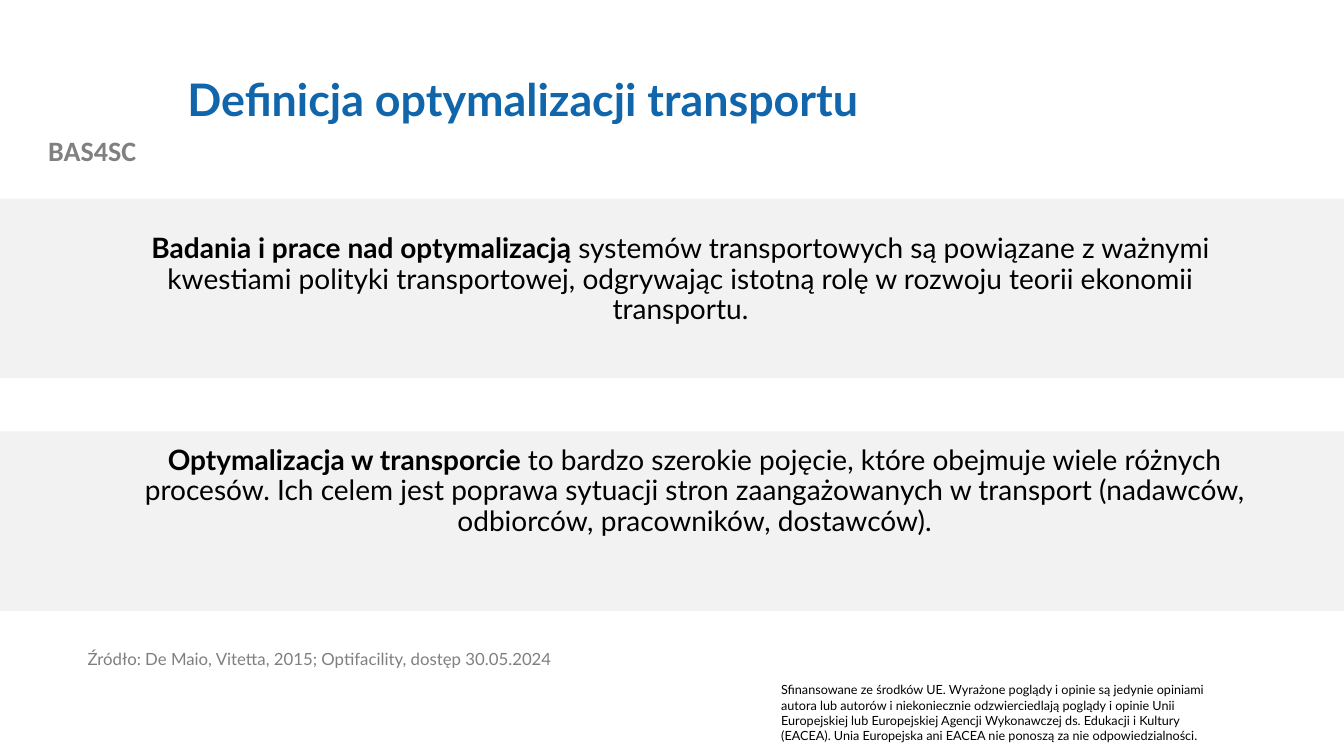
import pptx
import pptx.util
import pptx.dml.color
import pptx.enum.shapes
import pptx.enum.text
from pptx.util import Inches

# Content: each text is a list of (words, bold) runs
PROJECT = [("BAS4SC", True)]
TITLE = [("Definicja optymalizacji transportu", True)]
RESEARCH = [
    ("Badania i prace nad optymalizacją ", True),
    ("systemów transportowych są powiązane z ważnymi kwestiami polityki transportowej, "
     "odgrywając istotną rolę w rozwoju teorii ekonomii transportu.", False),
]
DEFINITION = [
    ("Optymalizacja w transporcie ", True),
    ("to bardzo szerokie pojęcie, które obejmuje wiele różnych procesów. Ich celem jest "
     "poprawa sytuacji stron zaangażowanych w transport (nadawców, odbiorców, "
     "pracowników, dostawców).", False),
]
SOURCE = [("Źródło: De Maio, Vitetta, 2015; Optifacility, dostęp 30.05.2024", False)]
FUNDING = [
    ("Sfinansowane ze środków UE. Wyrażone poglądy i opinie są jedynie opiniami autora lub "
     "autorów i niekoniecznie odzwierciedlają poglądy i opinie Unii Europejskiej lub "
     "Europejskiej Agencji Wykonawczej ds. Edukacji i Kultury (EACEA). Unia Europejska ani "
     "EACEA nie ponoszą za nie odpowiedzialności.", False),
]

SLIDE_W, SLIDE_H = 13.33, 7.5
BAND_H = 1.78
BAND_TOPS = (1.97, 4.28)

prs = pptx.Presentation()
prs.slide_width, prs.slide_height = Inches(SLIDE_W), Inches(SLIDE_H)
s = prs.slides.add_slide(prs.slide_layouts[6])


def rgb(value):
    return pptx.dml.color.RGBColor.from_string(value)


def add_text(runs, at, size, color="000000", font="Lato", center=False,
             middle=False, spacing=0.9):
    tf = s.shapes.add_textbox(*map(Inches, at)).text_frame
    tf.word_wrap = True
    anchor = pptx.enum.text.MSO_ANCHOR
    tf.vertical_anchor = anchor.MIDDLE if middle else anchor.TOP
    p = tf.paragraphs[0]
    align = pptx.enum.text.PP_ALIGN
    p.alignment = align.CENTER if center else align.LEFT
    p.line_spacing = spacing
    for words, bold in runs:
        r = p.add_run()
        r.text = words
        r.font.name, r.font.size, r.font.bold = font, pptx.util.Pt(size), bold
        r.font.color.rgb = rgb(color)


# Grey bands across the slide
for top in BAND_TOPS:
    band = s.shapes.add_shape(pptx.enum.shapes.MSO_SHAPE.RECTANGLE, 0, Inches(top),
                              Inches(SLIDE_W), Inches(BAND_H))
    band.shadow.inherit = False
    band.fill.solid()
    band.fill.fore_color.rgb = rgb("F2F2F2")
    band.line.fill.background()

# Heading
add_text(PROJECT, (0, 1.28, 1.83, 0.44), 20, color="808080", font="Calibri",
         center=True, spacing=1.0)
add_text(TITLE, (1.76, 0.4, 10.66, 1.22), 32, color="1065AB", middle=True)

# Statements on the bands
add_text(RESEARCH, (1, 2.28, 11.5, 1.69), 20, center=True)
add_text(DEFINITION, (0.93, 4.38, 11.92, 1.69), 20, center=True)

# Footer
add_text(SOURCE, (0.77, 6.41, 5.6, 0.52), 12, color="7F7F7F")
add_text(FUNDING, (7.65, 6.72, 4.63, 0.71), 9, spacing=1.0)

prs.save("out.pptx")
